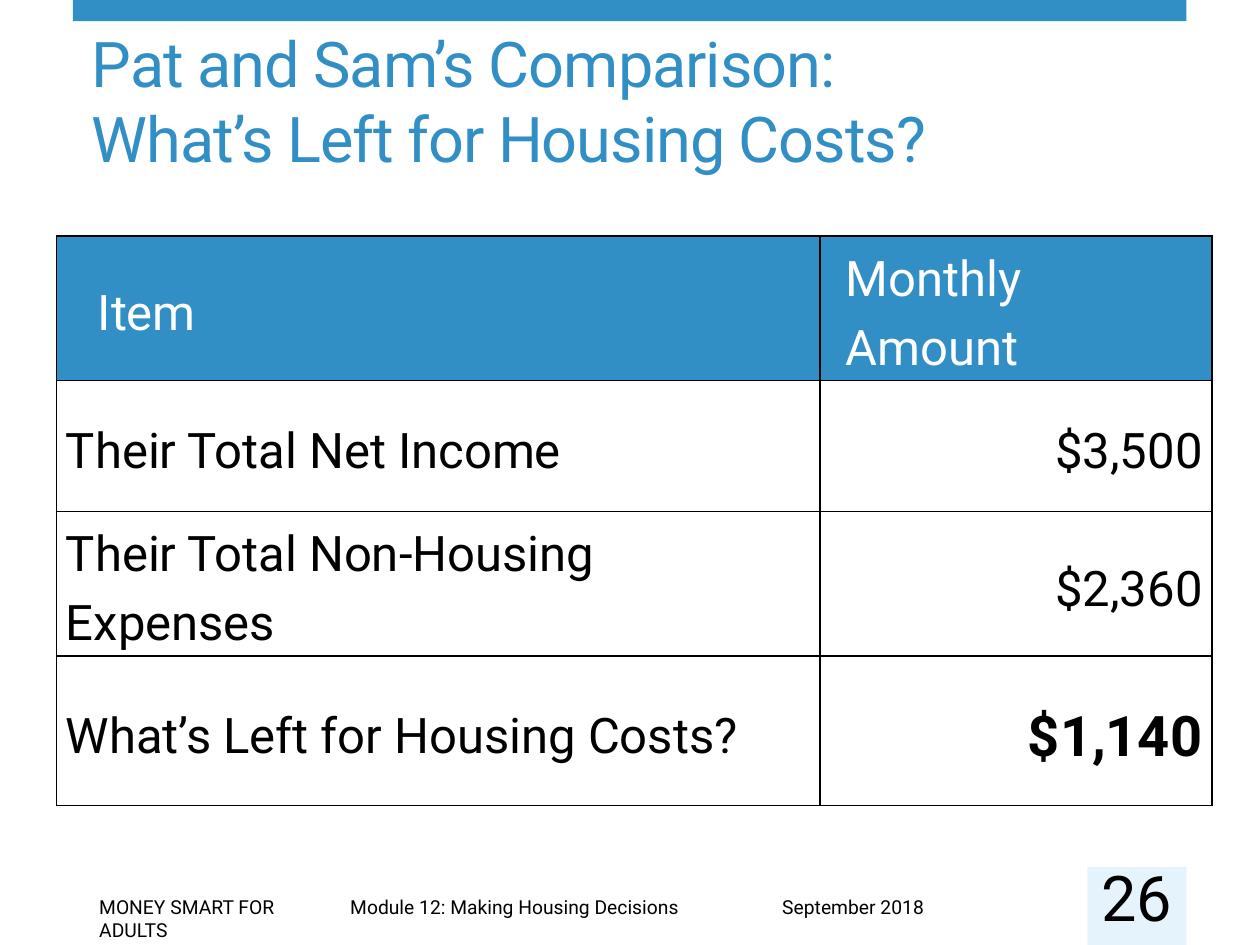
from dataclasses import dataclass

from lxml import etree
from pptx import Presentation
from pptx import util as u
from pptx.dml.color import RGBColor
from pptx.enum import shapes, text
from pptx.oxml.ns import qn

Cm, Pt = u.Cm, u.Pt
FONT = "Roboto"
COLORS = {"blue": "318FC5", "pale": "E4F3FC", "black": "000000", "white": "FFFFFF"}


@dataclass
class Band:
    left: float
    top: float
    width: float
    height: float
    color: str


@dataclass
class Label:
    words: str
    left: float
    top: float
    width: float
    height: float
    size: float = 11
    color: str = "black"
    anchor: text.MSO_ANCHOR = text.MSO_ANCHOR.TOP
    align: text.PP_ALIGN = text.PP_ALIGN.LEFT
    inset: bool = True
    tracking: int = 0  # hundredths of a point


@dataclass
class Entry:
    words: str
    color: str = "black"
    fill: str = "white"
    size: float = 28
    bold: bool = False
    align: text.PP_ALIGN = text.PP_ALIGN.LEFT
    indent: float = 0


def rgb(name: str) -> RGBColor:
    return RGBColor.from_string(COLORS[name])


def style(paragraph, size: float, color: str, bold: bool = False) -> None:
    font = paragraph.font
    font.name, font.size, font.bold = FONT, Pt(size), bold
    font.color.rgb = rgb(color)


def draw_band(slide, band: Band) -> None:
    bar = slide.shapes.add_shape(
        shapes.MSO_SHAPE.RECTANGLE,
        Cm(band.left), Cm(band.top), Cm(band.width), Cm(band.height))
    bar.shadow.inherit = False
    bar.fill.solid()
    bar.fill.fore_color.rgb = rgb(band.color)
    bar.line.fill.background()


def draw_label(slide, label: Label) -> None:
    box = slide.shapes.add_textbox(
        Cm(label.left), Cm(label.top), Cm(label.width), Cm(label.height))
    frame = box.text_frame
    frame.word_wrap = True
    frame.vertical_anchor = label.anchor
    if not label.inset:
        frame.margin_left = frame.margin_right = 0
        frame.margin_top = frame.margin_bottom = 0
    paragraph = frame.paragraphs[0]
    paragraph.text = label.words
    paragraph.alignment = label.align
    style(paragraph, label.size, label.color)
    if label.tracking:
        for run in paragraph.runs:
            run._r.get_or_add_rPr().set("spc", str(label.tracking))


def add_borders(cell) -> None:
    properties = cell._tc.get_or_add_tcPr()
    for position, side in enumerate(("lnL", "lnR", "lnT", "lnB")):
        line = etree.Element(qn(f"a:{side}"), w=str(Pt(1)))
        fill = etree.SubElement(line, qn("a:solidFill"))
        etree.SubElement(fill, qn("a:srgbClr"), val=COLORS["black"])
        properties.insert(position, line)


def fill_cell(cell, entry: Entry) -> None:
    cell.fill.solid()
    cell.fill.fore_color.rgb = rgb(entry.fill)
    add_borders(cell)
    cell.vertical_anchor = text.MSO_ANCHOR.MIDDLE
    cell.margin_left = cell.margin_right = Cm(0.19)
    cell.margin_top = cell.margin_bottom = 0
    paragraph = cell.text_frame.paragraphs[0]
    paragraph.text = entry.words
    paragraph.alignment = entry.align
    paragraph.line_spacing = 1.2
    paragraph.space_after = Pt(12)
    if entry.indent:
        paragraph._p.get_or_add_pPr().set("marL", str(Cm(entry.indent)))
    style(paragraph, entry.size, entry.color, entry.bold)


def heading(words: str, indent: float) -> Entry:
    return Entry(words, "white", "blue", indent=indent)


def amount(words: str, size: float = 28, bold: bool = False) -> Entry:
    return Entry(words, size=size, bold=bold, align=text.PP_ALIGN.RIGHT)


BANDS = [
    Band(1.47, 0, 22.45, 0.43, "blue"),
    Band(21.92, 17.48, 2, 1.57, "pale"),
]

LABELS = [
    # Title
    Label("Pat and Sam’s Comparison:\vWhat’s Left for Housing Costs?",
          1.6, 1.22, 20.83, 2.44, size=36, color="blue",
          anchor=text.MSO_ANCHOR.BOTTOM, tracking=-60),
    # Footer
    Label("MONEY SMART FOR ADULTS", 1.75, 17.93, 5.31, 0.74),
    Label("Module 12: Making Housing Decisions", 6.81, 17.93, 14.38, 0.74),
    Label("September 2018", 15.52, 17.93, 6.4, 0.74),
    # Page number
    Label("26", 21.92, 17.68, 2, 0.79, size=36, anchor=text.MSO_ANCHOR.MIDDLE,
          align=text.PP_ALIGN.CENTER, inset=False),
]

COLUMN_WIDTHS = [15.39, 7.9]
ROW_HEIGHTS = [2.91, 2.64, 2.91, 3.02]
BUDGET = [
    [heading("Item", 0.64), heading("Monthly Amount", 0.33)],
    [Entry("Their Total Net Income"), amount("$3,500")],
    [Entry("Their Total Non-Housing Expenses"), amount("$2,360")],
    [Entry("What’s Left for Housing Costs?"), amount("$1,140", 32, True)],
]


def draw_budget(slide) -> None:
    budget = slide.shapes.add_table(
        len(ROW_HEIGHTS), len(COLUMN_WIDTHS), Cm(1.14), Cm(4.76),
        Cm(sum(COLUMN_WIDTHS)), Cm(sum(ROW_HEIGHTS))).table
    budget.horz_banding = False
    for column, width in zip(budget.columns, COLUMN_WIDTHS):
        column.width = Cm(width)
    for row, height, entries in zip(budget.rows, ROW_HEIGHTS, BUDGET):
        row.height = Cm(height)
        for cell, entry in zip(row.cells, entries):
            fill_cell(cell, entry)


def main() -> None:
    deck = Presentation()
    deck.slide_width, deck.slide_height = Cm(25.4), Cm(19.05)
    slide = deck.slides.add_slide(deck.slide_layouts[6])
    for band in BANDS:
        draw_band(slide, band)
    for label in LABELS:
        draw_label(slide, label)
    draw_budget(slide)
    deck.save("out.pptx")


if __name__ == "__main__":
    main()
